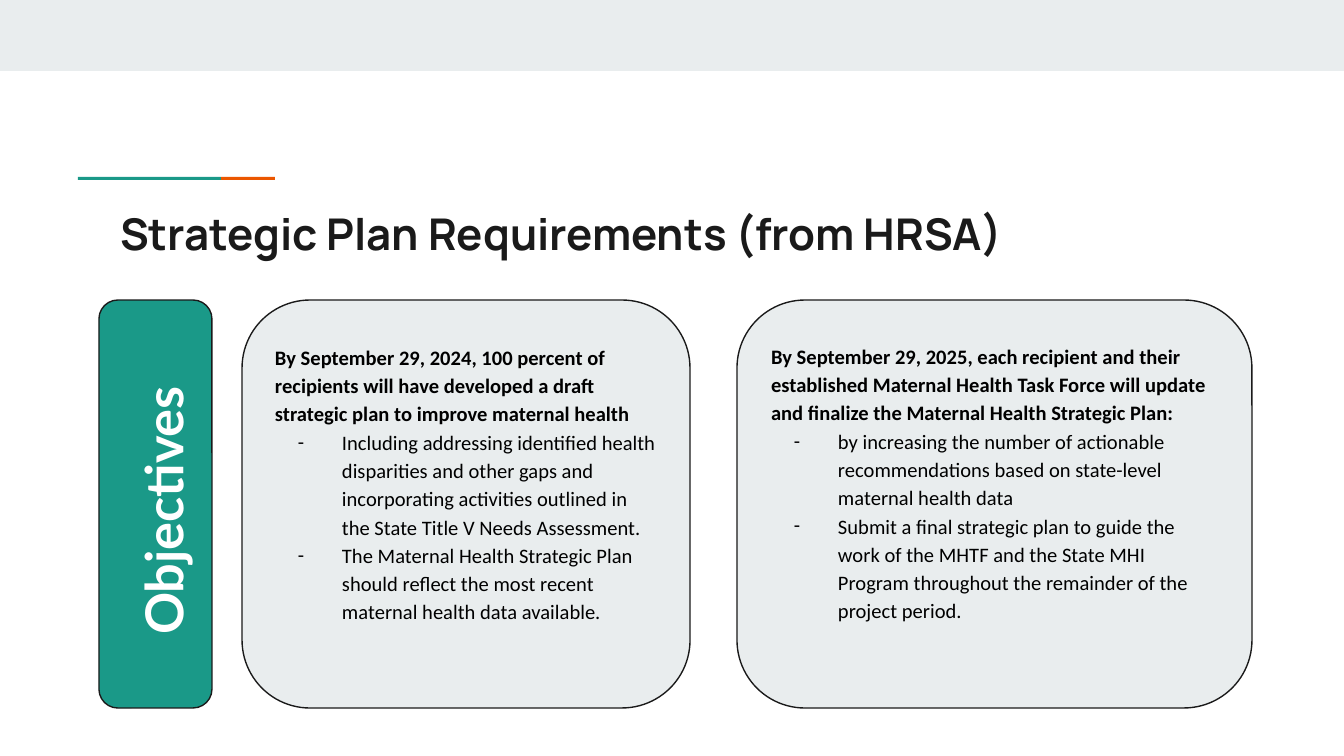
"""Build the strategic plan requirements slide."""
import pptx
import pptx.dml.color
import pptx.enum.shapes
import pptx.enum.text
import pptx.oxml
import pptx.oxml.ns
import pptx.util

SCALE = 914400 / 134.4
INK, TEAL, ORANGE, PALE = "1A1A1A", "1A9988", "EB5600", "E9EDEE"
INSET, INDENT, HANGING = 13, 67, 44
CARD_TOP, CARD_HEIGHT = 300, 408
SHAPE = pptx.enum.shapes.MSO_SHAPE
CARDS = [
    ((242, 448), (262, 328, 410, 343),
     "By September 29, 2024, 100 percent of recipients will have developed a draft "
     "strategic plan to improve maternal health",
     ["Including addressing identified health disparities and other gaps and "
      "incorporating activities outlined in the State Title V Needs Assessment.",
      "The Maternal Health Strategic Plan should reflect the most recent maternal "
      "health data available."]),
    ((737, 515), (758, 327, 472, 343),
     "By September 29, 2025, each recipient and their established Maternal Health "
     "Task Force will update and finalize the Maternal Health Strategic Plan:",
     ["by increasing the number of actionable recommendations based on state-level "
      "maternal health data",
      "Submit a final strategic plan to guide the work of the MHTF and the State MHI "
      "Program throughout the remainder of the project period."]),
]


def px(length):
    return pptx.util.Emu(round(length * SCALE))


def color(value):
    return pptx.dml.color.RGBColor.from_string(value)


def assign(target, values):
    for name, value in values.items():
        setattr(target, name, value)


class Painter:
    def __init__(self, page):
        self.page = page
        self.title_font = {"name": "Manrope", "size": pptx.util.Pt(23.4), "bold": True}
        self.label_font = {"name": "Lato", "size": pptx.util.Pt(28), "bold": True}
        self.body_font = {"name": "Calibri", "size": pptx.util.Pt(11)}
        self.spacing = {"alignment": pptx.enum.text.PP_ALIGN.LEFT,
                        "space_before": pptx.util.Pt(0), "space_after": pptx.util.Pt(0)}

    def place(self, box, area):
        assign(box, dict(zip(("left", "top", "width", "height"), map(px, area))))

    def panel(self, kind, area, fill, outlined=False):
        shape = self.page.shapes.add_shape(kind, *map(px, area))
        shape.shadow.inherit = False
        shape.fill.solid()
        shape.fill.fore_color.rgb = color(fill)
        if outlined:
            shape.line.color.rgb = color(INK)
            shape.line.width = pptx.util.Pt(0.75)
        else:
            shape.line.fill.background()

    def frame(self, box, anchor):
        margins = ("margin_left", "margin_top", "margin_right", "margin_bottom")
        assign(box.text_frame, dict.fromkeys(margins, px(INSET)))
        assign(box.text_frame, {"word_wrap": True, "vertical_anchor": anchor,
                                "auto_size": pptx.enum.text.MSO_AUTO_SIZE.NONE})

    def add_text(self, para, text, font, tint):
        assign(para, self.spacing)
        span = para.add_run()
        span.text = text
        assign(span.font, font)
        span.font.color.rgb = color(tint)

    def title(self, text, area):
        box = self.page.shapes.title
        self.place(box, area)
        self.frame(box, pptx.enum.text.MSO_ANCHOR.MIDDLE)
        self.add_text(box.text_frame.paragraphs[0], text, self.title_font, INK)

    def label(self, text, area):
        box = self.page.shapes.add_textbox(*map(px, area))
        box.rotation = 270
        self.frame(box, pptx.enum.text.MSO_ANCHOR.TOP)
        self.add_text(box.text_frame.paragraphs[0], text, self.label_font, "FFFFFF")

    def bullet(self, para, dashed):
        props = para._p.get_or_add_pPr()
        props.set("marL", str(px(INDENT if dashed else 0)))
        props.set("indent", str(px(-HANGING if dashed else 0)))
        marks = ['<a:buFont {} typeface="Calibri"/>', '<a:buChar {} char="-"/>']
        for mark in marks if dashed else ["<a:buNone {}/>"]:
            props.append(pptx.oxml.parse_xml(mark.format(pptx.oxml.ns.nsdecls("a"))))

    def body(self, box, area, heading, items):
        self.place(box, area)
        self.frame(box, pptx.enum.text.MSO_ANCHOR.TOP)
        box.element.getparent().append(box.element)
        for index, text in enumerate([heading, *items]):
            para = box.text_frame.add_paragraph() if index else box.text_frame.paragraphs[0]
            self.add_text(para, text, {**self.body_font, "bold": index == 0}, "000000")
            para.line_spacing = 1.15
            self.bullet(para, index > 0)


def main():
    deck = pptx.Presentation()
    assign(deck, {"slide_width": px(1344), "slide_height": px(756)})
    page = deck.slides.add_slide(deck.slide_layouts[3])
    painter = Painter(page)
    bodies = [page.placeholders[1], page.placeholders[2]]
    painter.panel(SHAPE.RECTANGLE, (0, 0, 1344, 71), PALE)
    painter.panel(SHAPE.RECTANGLE, (78, 177, 143, 3), TEAL)
    painter.panel(SHAPE.RECTANGLE, (221, 177, 54, 3), ORANGE)
    painter.title("Strategic Plan Requirements (from HRSA)", (107, 194, 1130, 79))
    painter.panel(SHAPE.ROUNDED_RECTANGLE, (99, CARD_TOP, 113, CARD_HEIGHT), TEAL, True)
    painter.label("Objectives", (3, 474, 289, 59))
    for box, ((left, width), area, heading, items) in zip(bodies, CARDS):
        painter.panel(SHAPE.ROUNDED_RECTANGLE, (left, CARD_TOP, width, CARD_HEIGHT), PALE, True)
        painter.body(box, area, heading, items)
    deck.save("out.pptx")


if __name__ == "__main__":
    main()
